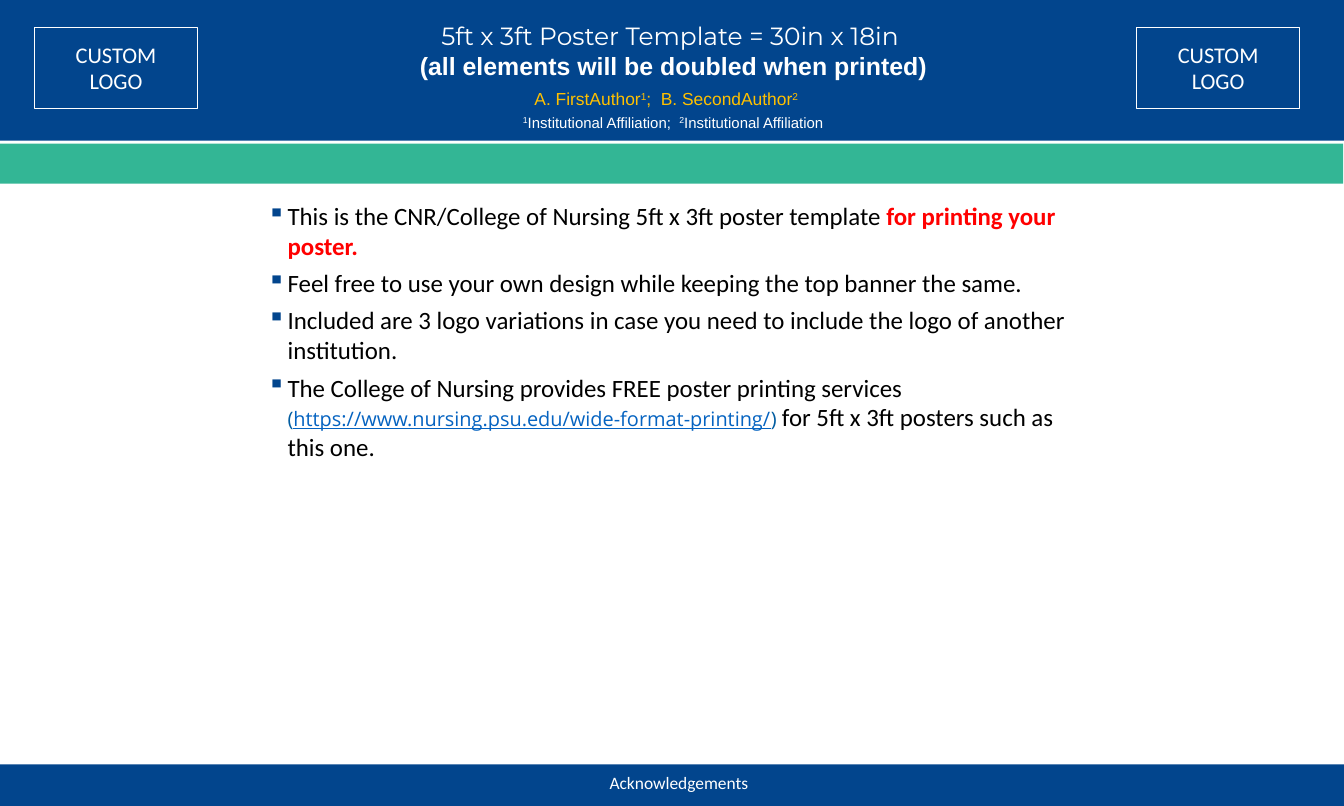
from dataclasses import dataclass

from lxml import etree
from pptx import Presentation
from pptx import util as u
from pptx.dml.color import RGBColor
from pptx.enum import shapes, text
from pptx.oxml.ns import qn

COLUMN, ROW = u.Inches(0.3), u.Inches(0.18)  # 100 by 100 grid
NAVY, GREEN, WHITE, BLACK = "02458D", "33B695", "FFFFFF", "000000"
GOLD, RED, LINK, LINK_EDGE = "FFC000", "FF0000", "0563C1", "025DA1"
CENTER = text.PP_ALIGN.CENTER


@dataclass(frozen=True)
class Area:
    """Place on the grid, in columns and rows."""
    column: float
    row: float
    columns: float
    rows: float

    def lengths(self) -> tuple:
        return (u.Emu(round(self.column * COLUMN)), u.Emu(round(self.row * ROW)),
                u.Emu(round(self.columns * COLUMN)), u.Emu(round(self.rows * ROW)))


@dataclass(frozen=True)
class Span:
    words: str
    size: int
    color: str = WHITE
    font: str = "Calibri"
    bold: bool = False
    underline: bool = False
    raised: bool = False
    break_after: bool = False


@dataclass(frozen=True)
class TextBlock:
    area: Area
    paragraphs: list
    spacing: float | None = None
    inset: bool = True
    wrap: bool = True
    middle: bool = False
    bullets: bool = False


def rgb(color: str) -> RGBColor:
    return RGBColor.from_string(color)


def draw_bar(parent, area: Area, fill: str | None = None, line: str | None = None) -> None:
    """Draw a rectangle; without a fill or line colour that part stays clear."""
    bar = parent.add_shape(shapes.MSO_SHAPE.RECTANGLE, *area.lengths())
    bar.shadow.inherit = False
    if fill:
        bar.fill.solid()
        bar.fill.fore_color.rgb = rgb(fill)
    else:
        bar.fill.background()
    if line:
        bar.line.color.rgb = rgb(line)
        bar.line.width = u.Pt(1)
    else:
        bar.line.fill.background()


def add_bullet(para) -> None:
    props = para._p.get_or_add_pPr()
    indent = u.Inches(0.45)
    props.set("marL", str(indent))
    props.set("indent", str(-indent))
    color = etree.SubElement(props, qn("a:buClr"))
    etree.SubElement(color, qn("a:srgbClr"), val=NAVY)
    etree.SubElement(props, qn("a:buChar"), char="▪")


def add_span(para, item: Span) -> None:
    span = para.add_run()
    span.text = item.words
    font = span.font
    font.size = u.Pt(item.size)
    font.name = item.font
    font.bold = item.bold
    font.underline = item.underline
    font.color.rgb = rgb(item.color)
    if item.raised:
        span._r.get_or_add_rPr().set("baseline", "30000")
    if item.break_after:
        para.add_line_break()


def draw_text(parent, block: TextBlock) -> None:
    box = parent.add_textbox(*block.area.lengths())
    frame = box.text_frame
    frame.word_wrap = block.wrap
    if block.middle:
        frame.vertical_anchor = text.MSO_ANCHOR.MIDDLE
    if not block.inset:
        frame.margin_left = frame.margin_right = 0
        frame.margin_top = frame.margin_bottom = 0
    for number, spans in enumerate(block.paragraphs):
        para = frame.add_paragraph() if number else frame.paragraphs[0]
        if block.bullets:
            add_bullet(para)
            para.space_after = u.Pt(12)
        else:
            para.alignment = CENTER
        if block.spacing:
            para.line_spacing = u.Pt(block.spacing)
        for item in spans:
            add_span(para, item)


def draw_logo_frame(page, column: float) -> None:
    group = page.shapes.add_group_shape()
    draw_bar(group.shapes, Area(column, 3.44, 12.13, 9.94), line=WHITE)
    draw_text(group.shapes, TextBlock(
        Area(column + 2.7, 4.78, 6.73, 7.28),
        [[Span("CUSTOM", 36)], [Span("LOGO", 36)]], wrap=False))


def affiliation(words: str, raised: bool = False) -> Span:
    return Span(words, 24, font="Arial", raised=raised)


def author(words: str, raised: bool = False) -> Span:
    return Span(words, 28, GOLD, "Arial", raised=raised)


def body(words: str) -> Span:
    return Span(words, 40, BLACK)


def link(words: str, color: str = LINK_EDGE, underline: bool = False) -> Span:
    return Span(words, 32, color, "Open Sans", underline=underline)


BARS = [
    (Area(0, 0, 100, 17.44), NAVY),
    (Area(0, 94.83, 100, 5.17), NAVY),
    (Area(0, 17.83, 99.93, 4.94), GREEN),
]

TEXTS = [
    TextBlock(Area(28.87, 14.5, 42.43, 1.78), [[
        affiliation("1", True), affiliation("Institutional Affiliation;  "),
        affiliation("2", True), affiliation("Institutional Affiliation"),
    ]], spacing=23, inset=False, middle=True),
    TextBlock(Area(39.22, 11.06, 20.7, 2.5), [[
        author("A. FirstAuthor"), author("1", True),
        author(";  B. SecondAuthor"), author("2", True),
    ]], spacing=32, inset=False, wrap=False, middle=True),
    TextBlock(Area(17.1, 2.67, 66, 11), [[
        Span("5ft x 3ft Poster Template = 30in x 18in ", 40, font="Montserrat",
             break_after=True),
        Span("(all elements will be doubled when printed)", 40, font="Arial", bold=True),
    ]], spacing=47, inset=False),
    TextBlock(Area(7.43, 95.56, 86.17, 3.17), [[Span("Acknowledgements", 28)]]),
    TextBlock(Area(19.57, 24.61, 60.67, 33.28), [
        [body("This is the CNR/College of Nursing 5ft x 3ft poster template "),
         Span("for printing your poster.", 40, RED, bold=True)],
        [body("Feel free to use your own design while keeping the top banner the same.")],
        [body("Included are 3 logo variations in case you need to include the logo of "
              "another institution.")],
        [body("The College of Nursing provides FREE poster printing services "),
         link("("),
         link("https://www.nursing.psu.edu/wide-format-printing/", LINK, True),
         link(") "),
         body("for 5ft x 3ft posters such as this one.")],
    ], bullets=True),
]


def main() -> None:
    deck = Presentation()
    deck.slide_width, deck.slide_height = 100 * COLUMN, 100 * ROW
    page = deck.slides.add_slide(deck.slide_layouts[6])
    for area, fill in BARS:
        draw_bar(page.shapes, area, fill)
    for block in TEXTS:
        draw_text(page.shapes, block)
    for column in (2.57, 84.57):
        draw_logo_frame(page, column)
    deck.save("out.pptx")


if __name__ == "__main__":
    main()
